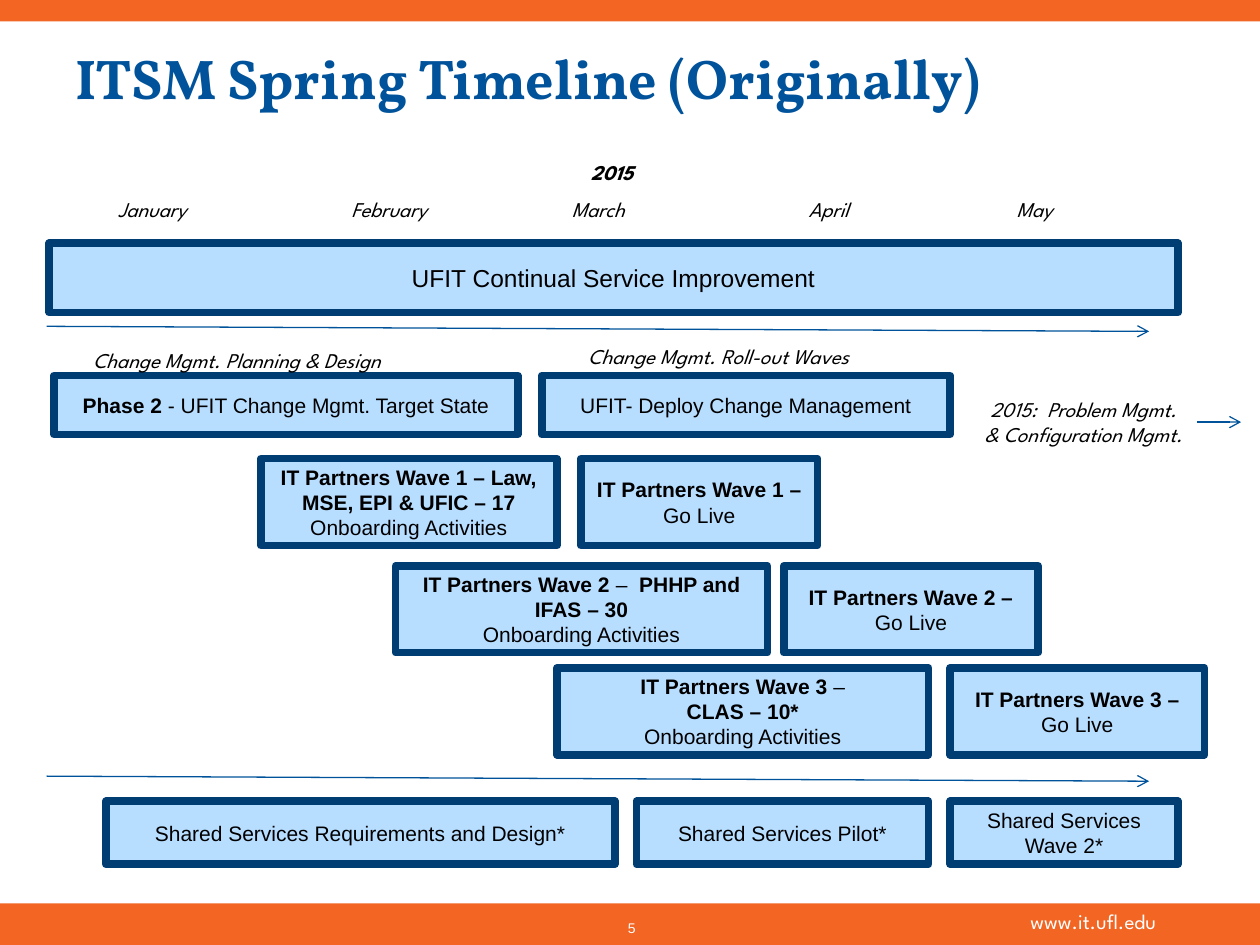
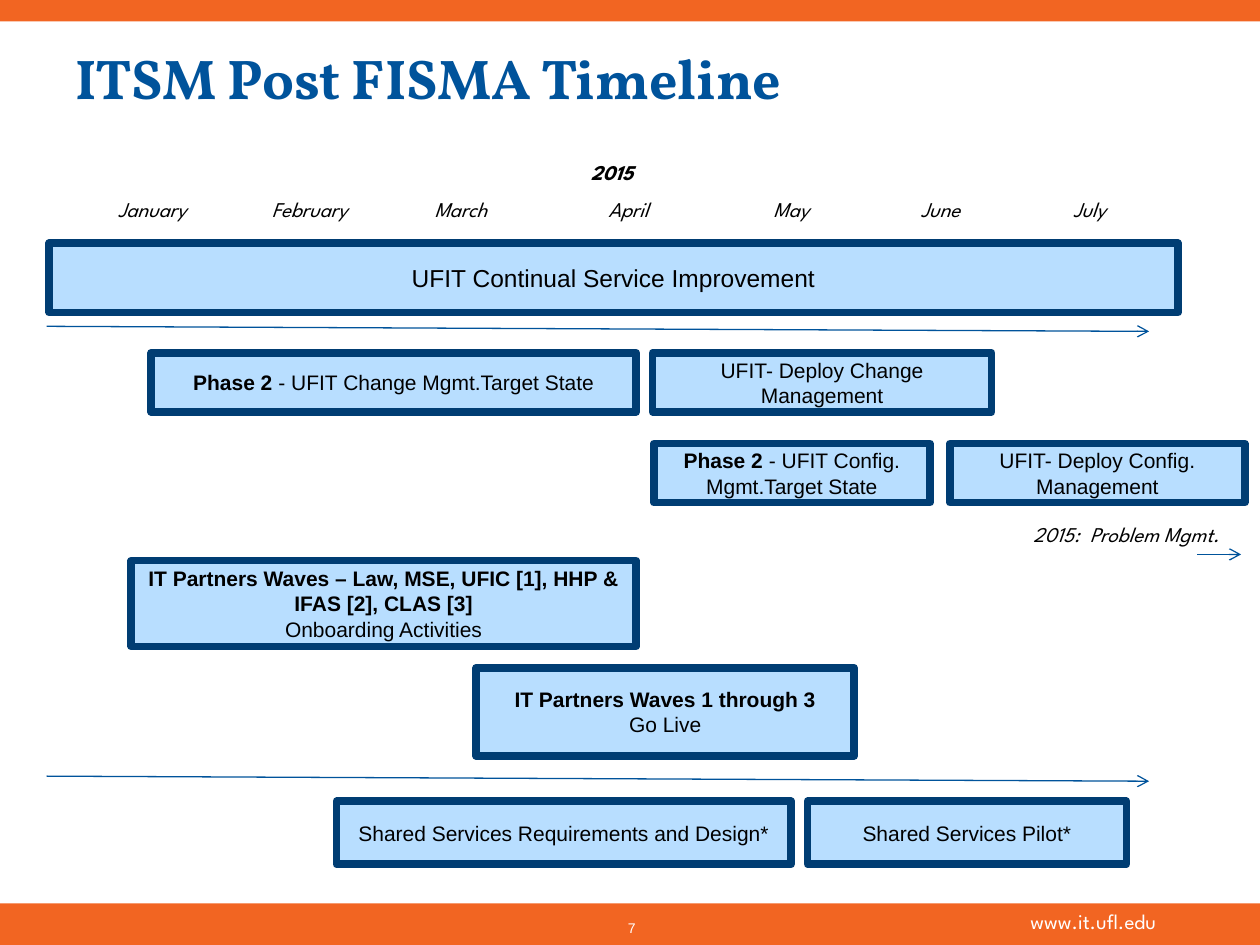
from dataclasses import dataclass
from typing import NamedTuple

from lxml import etree
from pptx import Presentation
from pptx import util as u
from pptx.dml.color import RGBColor
from pptx.enum import shapes, text
from pptx.oxml import ns

PX = 9144  # EMU in one px, 100 px to the inch


class Box(NamedTuple):
    left: int
    top: int
    width: int
    height: int

    def inner(self, left, top, width, height):
        return Box(self.left + left, self.top + top, width, height)

    def emu(self):
        return [u.Emu(side * PX) for side in self]


class Style(NamedTuple):
    font: str
    size: int
    color: str
    bold: bool = False
    italic: bool = False


@dataclass(frozen=True)
class Theme:
    band: str = "F26522"
    bar: str = "B8DEFF"
    bar_edge: str = "003D73"
    arrow: str = "00539B"
    paper: str = "FFFFFF"
    edge_pt: float = 4.33
    arrow_pt: float = 0.75
    title: Style = Style("Vollkorn", 32, "00539B", bold=True)
    address: Style = Style("League Spartan", 12, "FFFFFF")
    number: Style = Style("Arial", 8, "FFFFFF")
    service: Style = Style("Arial", 14, "000000")
    task: Style = Style("Arial", 12, "000000")
    label: Style = Style("League Spartan", 12, "000000", italic=True)
    year: Style = Style("League Spartan", 12, "000000", bold=True, italic=True)


THEME = Theme()
PAGE = Box(0, 0, 1000, 750)
PLAN = Box(39, 122, 896, 565)
MONTH_WIDTHS = {"January": 86, "February": 92, "March": 81}
OTHER_MONTH_WIDTH = 73
CENTER = text.PP_ALIGN.CENTER
MIDDLE = text.MSO_ANCHOR.MIDDLE


# Basic parts

def write(frame, wording, style, align=None, anchor=text.MSO_ANCHOR.TOP):
    """Fill a text frame; words between | marks are bold."""
    frame.word_wrap = True
    frame.vertical_anchor = anchor
    for index, line in enumerate(wording.split("\n")):
        paragraph = frame.add_paragraph() if index else frame.paragraphs[0]
        paragraph.alignment = align
        for part, words in enumerate(line.split("|")):
            if not words:
                continue
            run = paragraph.add_run()
            run.text = words
            run.font.name = style.font
            run.font.size = u.Pt(style.size)
            run.font.bold = style.bold or part % 2 == 1
            run.font.italic = style.italic
            run.font.color.rgb = RGBColor.from_string(style.color)


def add_label(slide, box, wording, style, align=None,
              anchor=text.MSO_ANCHOR.TOP):
    label = slide.shapes.add_textbox(*box.emu())
    write(label.text_frame, wording, style, align, anchor)
    return label


def paint(shape, color):
    shape.fill.solid()
    shape.fill.fore_color.rgb = RGBColor.from_string(color)


def add_rectangle(slide, box, color):
    rectangle = slide.shapes.add_shape(
        shapes.MSO_SHAPE.RECTANGLE, *box.emu())
    rectangle.shadow.inherit = False
    paint(rectangle, color)
    rectangle.line.fill.background()
    return rectangle


def add_bar(slide, box, wording, style):
    bar = add_rectangle(slide, box, THEME.bar)
    bar.line.color.rgb = RGBColor.from_string(THEME.bar_edge)
    bar.line.width = u.Pt(THEME.edge_pt)
    write(bar.text_frame, wording, style, CENTER, MIDDLE)


def add_arrow(slide, box):
    """Arrow from the top left to the bottom right corner of the box."""
    left, top, width, height = box.emu()
    arrow = slide.shapes.add_connector(
        shapes.MSO_CONNECTOR.STRAIGHT, left, top, left + width, top + height)
    arrow.line.color.rgb = RGBColor.from_string(THEME.arrow)
    arrow.line.width = u.Pt(THEME.arrow_pt)
    etree.SubElement(arrow.line._get_or_add_ln(), ns.qn("a:tailEnd"),
                     type="arrow")
    etree.SubElement(arrow._element.spPr, ns.qn("a:effectLst"))


# Regions

def add_page_frame(slide, box, title, number):
    """Bands, footer and title."""
    add_rectangle(slide, box.inner(0, 717, box.width, 33), THEME.band)
    add_rectangle(slide, box.inner(0, 0, box.width, 17), THEME.band)
    add_label(slide, box.inner(808, 716, 142, 30), "www.it.ufl.edu",
              THEME.address)
    page_number = add_label(slide, box.inner(406, 717, 191, 26), number,
                            THEME.number, CENTER, text.MSO_ANCHOR.BOTTOM)
    frame = page_number.text_frame
    frame.margin_left = frame.margin_right = 0
    frame.margin_top = frame.margin_bottom = 0
    add_label(slide, box.inner(50, 0, 900, 122), title, THEME.title,
              anchor=MIDDLE)


def add_calendar(slide, box, months):
    """Year, months, the continual service bar and the two long arrows."""
    add_label(slide, box.inner(420, 0, 60, 30), "2015", THEME.year)
    for month, left in months.items():
        width = MONTH_WIDTHS.get(month, OTHER_MONTH_WIDTH)
        add_label(slide, box.inner(left, 29, width, 30), month, THEME.label)
    add_bar(slide, box.inner(0, 71, box.width, 55),
            "UFIT Continual Service Improvement", THEME.service)
    for top in (137, 494):
        add_arrow(slide, box.inner(-2, top, 875, 4))


def add_lane(slide, box, tasks):
    """One row of bars, each with its left, width and wording."""
    for left, width, wording in tasks:
        add_bar(slide, box.inner(left, 0, width, box.height), wording,
                THEME.task)


def add_outlook(slide, box, wording, arrow_top):
    """What follows later in the year, with a short arrow."""
    add_label(slide, box, wording, THEME.label, CENTER)
    add_arrow(slide, Box(950, arrow_top, 35, 0))


def add_timeline(deck, title, number, months, lanes):
    slide = deck.slides.add_slide(deck.slide_layouts[6])
    add_page_frame(slide, PAGE, title, number)
    add_calendar(slide, PLAN, months)
    for top, height, tasks in lanes:
        add_lane(slide, PLAN.inner(0, top, PLAN.width, height), tasks)
    return slide


# Slides

def add_spring_timeline(deck):
    months = {"January": 45, "February": 230, "March": 405, "April": 593,
              "May": 758}
    lanes = [
        (176, 47, [
            (4, 368, "|Phase 2 |- UFIT Change Mgmt. Target State"),
            (391, 324, "UFIT- Deploy Change Management")]),
        (242, 69, [
            (168, 235, "|IT Partners Wave 1 – Law, MSE, EPI & UFIC – 17|\n"
                       "Onboarding Activities"),
            (422, 188, "|IT Partners Wave 1 –|\nGo Live")]),
        (327, 69, [
            (275, 295, "|IT Partners Wave 2 |–  |PHHP and IFAS – 30|\n"
                       "Onboarding Activities"),
            (583, 202, "|IT Partners Wave 2 –|\nGo Live")]),
        (408, 69, [
            (403, 295, "|IT Partners Wave 3 |–\n|CLAS – 10*|\n"
                       "Onboarding Activities"),
            (715, 202, "|IT Partners Wave 3 –|\nGo Live")]),
        (514, 50, [
            (45, 404, "Shared Services Requirements and Design*"),
            (466, 232, "Shared Services Pilot*"),
            (715, 181, "Shared Services Wave 2*")]),
    ]
    slide = add_timeline(deck, "ITSM Spring Timeline (Originally)", "5",
                         months, lanes)
    add_label(slide, PLAN.inner(25, 149, 299, 30),
              "Change Mgmt. Planning & Design", THEME.label)
    add_label(slide, PLAN.inner(418, 146, 271, 30),
              "Change Mgmt. Roll-out Waves", THEME.label)
    add_outlook(slide, PLAN.inner(715, 188, 212, 50),
                "2015:  Problem Mgmt.\n& Configuration Mgmt.", 335)


def add_post_fisma_timeline(deck):
    months = {"January": 45, "February": 167, "March": 296, "April": 434,
              "May": 565, "June": 682, "July": 803}
    lanes = [
        (158, 47, [
            (81, 385, "|Phase 2 |- UFIT Change Mgmt.Target State"),
            (479, 269, "UFIT- Deploy Change Management")]),
        (230, 47, [
            (480, 219, "|Phase 2 |- UFIT Config. Mgmt.Target State"),
            (715, 234, "UFIT- Deploy Config. Management")]),
        (323, 68, [
            (65, 401, "|IT Partners Waves – Law, MSE, UFIC [1], HHP & "
                      "IFAS [2], CLAS [3]|\nOnboarding Activities")]),
        (408, 70, [
            (339, 300, "|IT Partners Waves 1 through 3|\nGo Live")]),
        (514, 50, [
            (228, 361, "Shared Services Requirements and Design*"),
            (602, 253, "Shared Services Pilot*")]),
    ]
    slide = add_timeline(deck, "ITSM Post FISMA Timeline", "7", months, lanes)
    add_outlook(slide, PLAN.inner(749, 287, 212, 50), "2015:  Problem Mgmt.",
                440)


def main():
    deck = Presentation()
    deck.slide_width = u.Emu(PAGE.width * PX)
    deck.slide_height = u.Emu(PAGE.height * PX)
    add_spring_timeline(deck)
    add_post_fisma_timeline(deck)
    deck.save("out.pptx")


if __name__ == "__main__":
    main()
